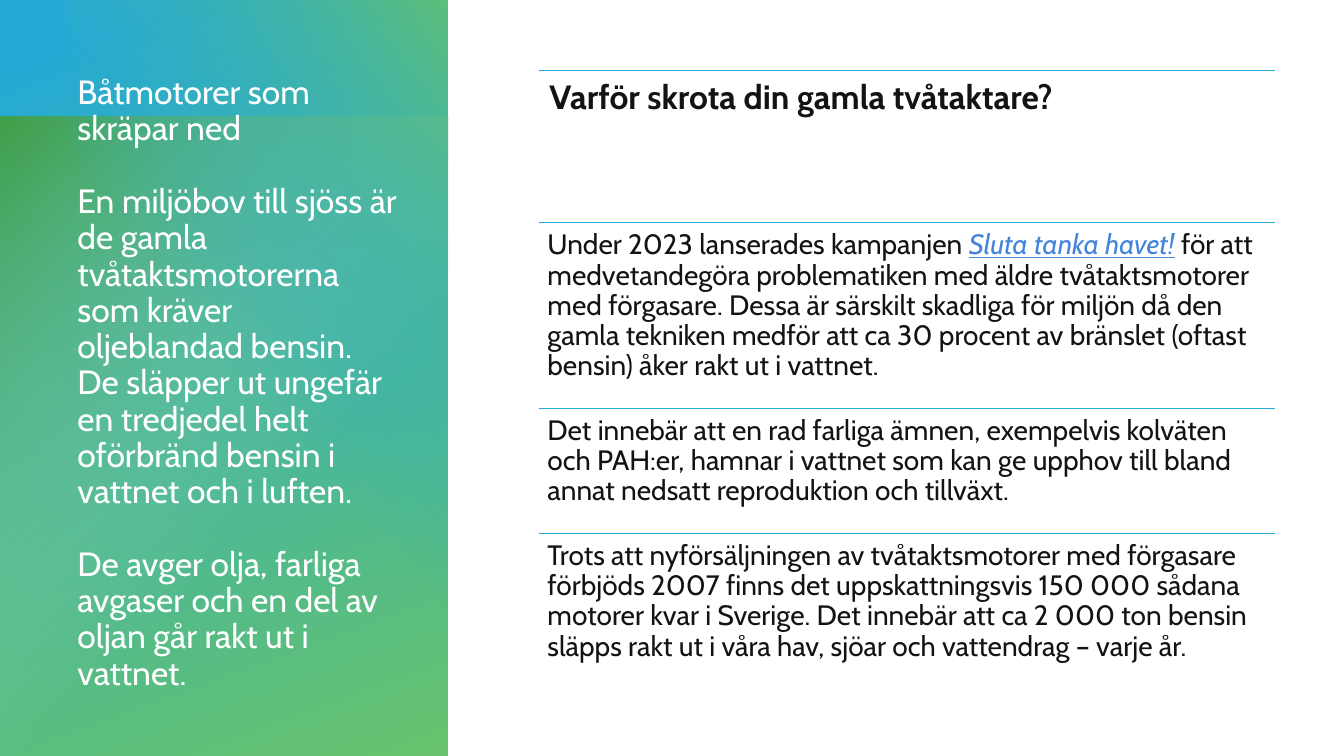
import pptx
import pptx.dml.color
import pptx.enum.shapes
import pptx.enum.text
import pptx.oxml
import pptx.oxml.ns
import pptx.util
from lxml import etree

SLIDE_WIDTH, SLIDE_HEIGHT = 13.33, 7.5
FONT = "Cabin"
BLUE, GREEN, INK, LINK, WHITE = "25AAD5", "66C26C", "131313", "4485DC", "FFFFFF"

# Each panel: box, rotation, stops (position %, colour, opacity %), direction
PANEL_WIDTH = SLIDE_WIDTH / 3
LINEAR = '<a:lin ang="{}" scaled="0"/>'
CORNER = '<a:path path="circle"><a:fillToRect r="100000" b="100000"/></a:path>'
PANELS = [
    ((0, 0, PANEL_WIDTH, 7.51), 0,
     [(7, BLUE, 100), (100, GREEN, 100)], LINEAR.format(70 * 60000)),
    ((0, 1.16, PANEL_WIDTH, 6.35), 180,
     [(0, "3F9F46", 100), (60, "A3DAA7", 0)], CORNER),
    ((-0.57, 1.24, 6.25, 3.77), 270,
     [(0, GREEN, 86), (57, BLUE, 0)], LINEAR.format(230 * 60000)),
]

TITLE_BOX = (0.67, 0.7, 3.37, 6.42)
TITLE_SIZE, TITLE_GAP = 24, 26
TITLE = [
    ["Båtmotorer som ", "skräpar ned"],
    ["En miljöbov till sjöss är de gamla tvåtaktsmotorerna som kräver "
     "oljeblandad bensin. De släpper ut ungefär en tredjedel helt oförbränd "
     "bensin i vattnet och i luften. "],
    ["De avger olja, farliga avgaser och en del av oljan går rakt ut i vattnet. "],
]

ROWS_LEFT, ROWS_TOP, ROWS_WIDTH = 5.35, 0.7, 7.3
# Each row: height, inset, text size, runs (text, style)
ROWS = [
    (1.51, 0.1, 24, [("Varför skrota din gamla tvåtaktare?", "bold")]),
    (1.84, 0.08, 20, [
        ("Under 2023 lanserades kampanjen ", "plain"),
        ("Sluta tanka havet!", "link"),
        (" för att medvetandegöra problematiken med äldre tvåtaktsmotorer med "
         "förgasare. Dessa är särskilt skadliga för miljön då den gamla tekniken "
         "medför att ca 30 procent av bränslet (oftast bensin) åker rakt ut i "
         "vattnet.", "plain")]),
    (1.24, 0.08, 20, [
        ("Det innebär att en rad farliga ämnen, exempelvis kolväten och PAH:er, "
         "hamnar i vattnet som kan ge upphov till bland annat nedsatt "
         "reproduktion och tillväxt.", "plain")]),
    (1.51, 0.08, 20, [
        ("Trots att nyförsäljningen av tvåtaktsmotorer med förgasare förbjöds "
         "2007 finns det uppskattningsvis 150 000 sådana motorer kvar i Sverige. "
         "Det innebär att ca 2 000 ton bensin släpps rakt ut i våra hav, sjöar "
         "och vattendrag – varje år.", "plain")]),
]


def color(value):
    return pptx.dml.color.RGBColor.from_string(value)


def inches(*values):
    return [pptx.util.Inches(value) for value in values]


def add_panel(slide, box, rotation, stops, direction):
    shape = slide.shapes.add_shape(
        pptx.enum.shapes.MSO_SHAPE.RECTANGLE, *inches(*box))
    shape.rotation = rotation
    shape.shadow.inherit = False
    shape.line.fill.background()
    stop_xml = "".join(
        f'<a:gs pos="{position * 1000}"><a:srgbClr val="{value}">'
        f'<a:alpha val="{opacity * 1000}"/></a:srgbClr></a:gs>'
        for position, value, opacity in stops)
    gradient = pptx.oxml.parse_xml(
        f'<a:gradFill {pptx.oxml.ns.nsdecls("a")} rotWithShape="1">'
        f'<a:gsLst>{stop_xml}</a:gsLst>{direction}</a:gradFill>')
    shape.element.spPr.find(pptx.oxml.ns.qn("a:prstGeom")).addnext(gradient)


def add_text_frame(slide, box, inset_x, inset_y):
    frame = slide.shapes.add_textbox(*inches(*box)).text_frame
    frame.word_wrap = True
    frame.vertical_anchor = pptx.enum.text.MSO_ANCHOR.TOP
    frame.margin_left, frame.margin_right = inches(inset_x, inset_x)
    frame.margin_top, frame.margin_bottom = inches(inset_y, inset_y)
    return frame


def add_run(paragraph, text, size, value, style="plain"):
    run = paragraph.add_run()
    run.text = text
    run.font.name = FONT
    run.font.size = pptx.util.Pt(size)
    run.font.color.rgb = color(value)
    run.font.bold = style == "bold"
    run.font.italic = run.font.underline = style == "link"


def add_title(slide):
    frame = add_text_frame(slide, TITLE_BOX, 0.1, 0.05)
    for index, lines in enumerate(TITLE):
        paragraph = frame.add_paragraph() if index else frame.paragraphs[0]
        paragraph.line_spacing = 0.9
        paragraph.space_before = pptx.util.Pt(TITLE_GAP if index else 0)
        for number, line in enumerate(lines):
            if number:
                paragraph.add_line_break()
            add_run(paragraph, line, TITLE_SIZE, WHITE)


def add_rule(slide, top):
    rule = slide.shapes.add_connector(
        pptx.enum.shapes.MSO_CONNECTOR.STRAIGHT,
        *inches(ROWS_LEFT, top, ROWS_LEFT + ROWS_WIDTH, top))
    rule.line.color.rgb = color(BLUE)
    rule.line.width = pptx.util.Pt(1)
    etree.SubElement(rule.element.spPr, pptx.oxml.ns.qn("a:effectLst"))


def add_rows(slide):
    top = ROWS_TOP
    for height, inset, size, runs in ROWS:
        add_rule(slide, top)
        frame = add_text_frame(
            slide, (ROWS_LEFT, top, ROWS_WIDTH, height), inset, inset)
        paragraph = frame.paragraphs[0]
        paragraph.line_spacing = 0.9
        for text, style in runs:
            add_run(paragraph, text, size, LINK if style == "link" else INK, style)
        top += height


def main():
    presentation = pptx.Presentation()
    presentation.slide_width, presentation.slide_height = inches(
        SLIDE_WIDTH, SLIDE_HEIGHT)
    slide = presentation.slides.add_slide(presentation.slide_layouts[6])
    for panel in PANELS:
        add_panel(slide, *panel)
    add_title(slide)
    add_rows(slide)
    presentation.save("out.pptx")


if __name__ == "__main__":
    main()
